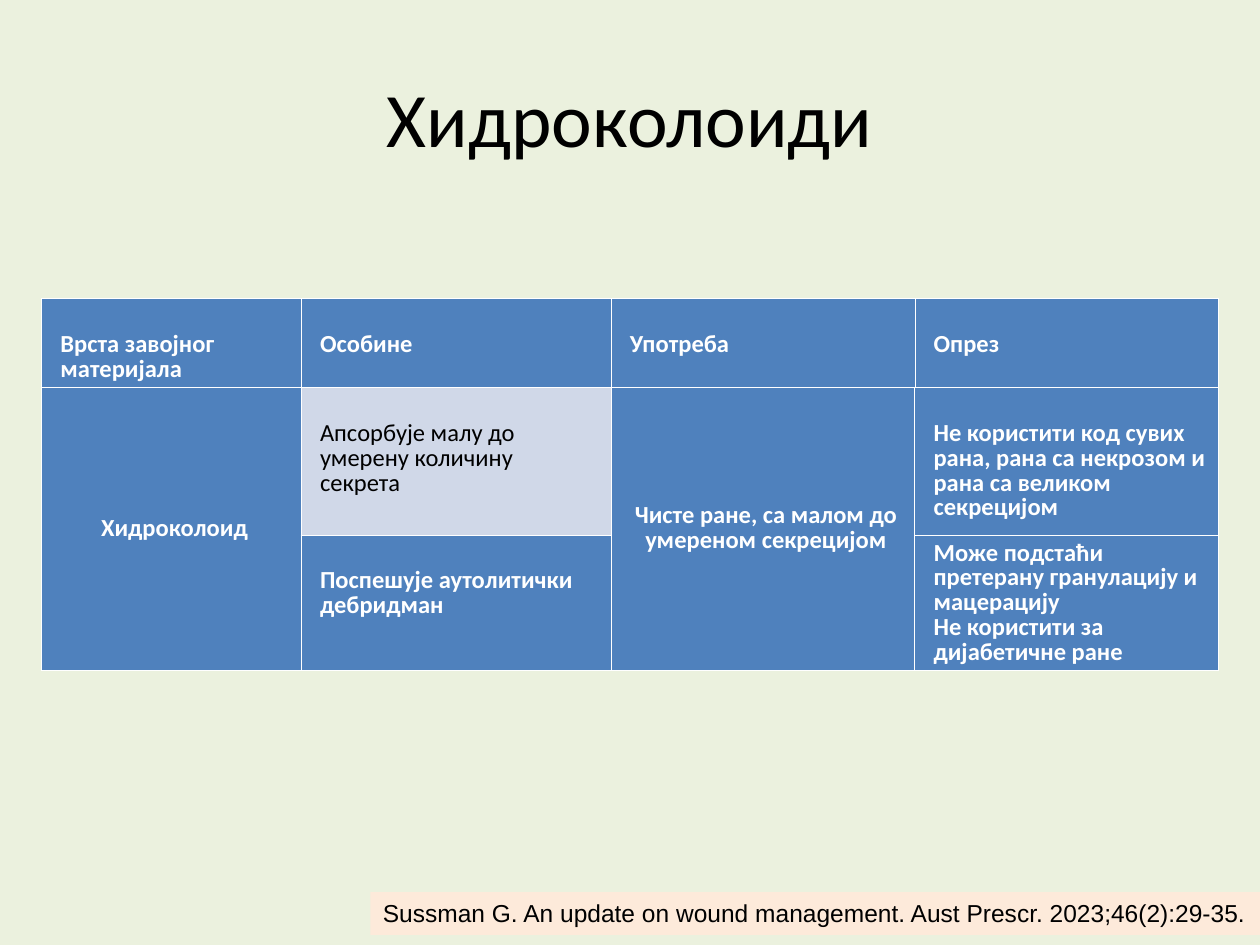
"""Build a slide with a table on hydrocolloid wound dressings."""
from lxml import etree
from pptx import Presentation
from pptx.dml.color import RGBColor
from pptx.enum.shapes import MSO_SHAPE
from pptx.enum.text import MSO_ANCHOR, MSO_AUTO_SIZE, PP_ALIGN
from pptx.oxml.ns import qn
from pptx.util import Inches, Pt

RECT = MSO_SHAPE.RECTANGLE
TOP, MIDDLE = MSO_ANCHOR.TOP, MSO_ANCHOR.MIDDLE
LEFT, CENTER = PP_ALIGN.LEFT, PP_ALIGN.CENTER
GROW = MSO_AUTO_SIZE.SHAPE_TO_FIT_TEXT

BLUE, PALE, WHITE, BLACK = "4F81BD", "D0D8E8", "FFFFFF", "000000"
CREAM, PEACH = "EBF1DE", "FDEADA"
THIN, THICK = 0.23, 0.75

COLS = [2.06, 2.46, 2.41, 2.41]
ROWS = [0.7, 1.17, 0.93]
CELLS = [
    ["Врста завојног материјала", "Особине", "Употреба", "Опрез"],
    ["Хидроколоид",
     "Апсорбује малу до умерену количину секрета",
     "Чисте ране, са малом до умереном секрецијом",
     "Не користити код сувих рана, рана са некрозом и рана са великом секрецијом"],
    [None,
     "Поспешује аутолитички дебридман",
     None,
     "Може подстаћи претерану гранулацију и мацерацију\nНе користити за дијабетичне ране"],
]


def paint(fill, color):
    fill.solid()
    fill.fore_color.rgb = RGBColor.from_string(color)


def write(frame, text, size=14, font="Calibri", color=BLACK, bold=False,
          align=LEFT, space=None):
    for i, line in enumerate(text.split("\n")):
        par = frame.add_paragraph() if i else frame.paragraphs[0]
        par.alignment = align
        if space:
            par.line_spacing = space
        run = par.add_run()
        run.text = line
        run.font.size = Pt(size)
        run.font.name = font
        run.font.bold = bold
        run.font.color.rgb = RGBColor.from_string(color)


def edge(cell, side, width):
    line = etree.SubElement(cell._tc.get_or_add_tcPr(), qn(f"a:ln{side}"), w=str(Pt(width)))
    fill = etree.SubElement(line, qn("a:solidFill"))
    etree.SubElement(fill, qn("a:srgbClr"), val=WHITE)


class Board:
    def __init__(self, slide, color):
        self.slide = slide
        paint(slide.background.fill, color)

    def title(self, text, *box):
        frame = self.slide.shapes.add_textbox(*map(Inches, box)).text_frame
        frame.word_wrap = True
        frame.vertical_anchor = MIDDLE
        write(frame, text, size=44, align=CENTER)

    def source(self, text, *box):
        shape = self.slide.shapes.add_shape(RECT, *map(Inches, box))
        shape.shadow.inherit = False
        shape.line.fill.background()
        paint(shape.fill, PEACH)
        frame = shape.text_frame
        frame.word_wrap = False
        frame.auto_size = GROW
        frame.vertical_anchor = TOP
        write(frame, text, font="Arial")

    def table(self, left, top):
        box = map(Inches, (left, top, sum(COLS), sum(ROWS)))
        grid = self.slide.shapes.add_table(len(ROWS), len(COLS), *box).table
        for col, width in zip(grid.columns, COLS):
            col.width = Inches(width)
        for row, height in zip(grid.rows, ROWS):
            row.height = Inches(height)
        for c, text in enumerate(CELLS[2]):
            if text is None:
                grid.cell(1, c).merge(grid.cell(2, c))
        for r, row in enumerate(CELLS):
            for c, text in enumerate(row):
                if text is not None:
                    self.cell(grid.cell(r, c), text, r, c)

    def cell(self, cell, text, r, c):
        merged = cell.is_merge_origin
        plain = (r, c) == (1, 1)
        last = merged or r == len(ROWS) - 1
        edge(cell, "L", THICK if r == 1 and not merged else THIN)
        edge(cell, "R", THIN)
        edge(cell, "T", THICK if r else THIN)
        edge(cell, "B", THIN if last else THICK)
        paint(cell.fill, PALE if plain else BLUE)
        cell.margin_left = Inches(0.15)
        cell.vertical_anchor = MIDDLE if merged else TOP
        if not merged and "\n" not in text:
            cell.margin_top = Inches(0.27)
        write(cell.text_frame, text, color=BLACK if plain else WHITE, bold=not plain,
              align=CENTER if merged else LEFT, space=0.83)


def main():
    deck = Presentation()
    deck.slide_width, deck.slide_height = Inches(10), Inches(7.5)
    board = Board(deck.slides.add_slide(deck.slide_layouts[6]), CREAM)
    board.title("Хидроколоиди", 0.5, 0.3, 9, 1.25)
    board.table(0.33, 2.37)
    board.source("Sussman G. An update on wound management. Aust Prescr. 2023;46(2):29-35.",
                 2.94, 7.08, 7.15, 0.34)
    deck.save("out.pptx")


if __name__ == "__main__":
    main()
